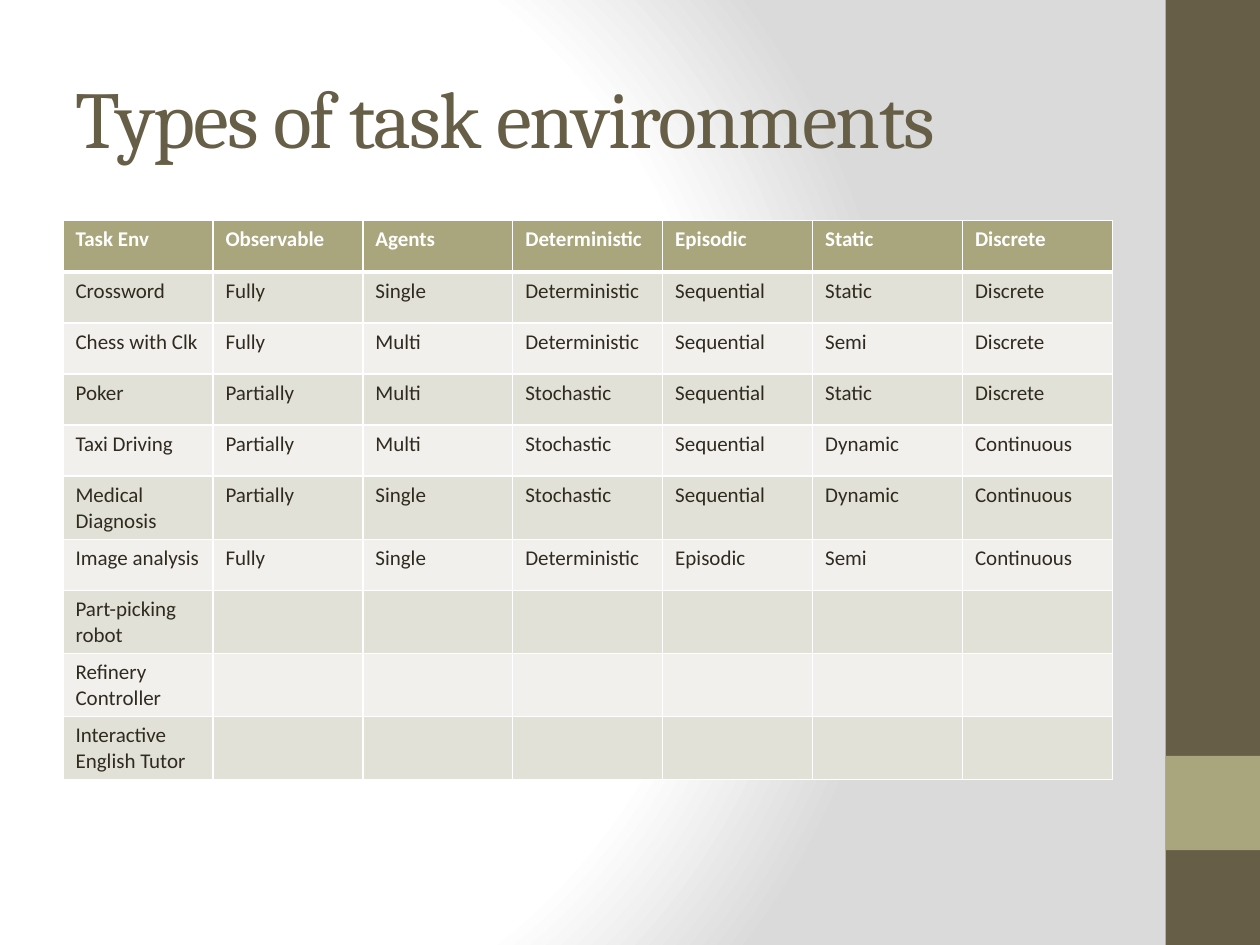
from dataclasses import dataclass

from pptx import Presentation
from pptx.dml.color import RGBColor
from pptx.enum.shapes import MSO_SHAPE
from pptx.enum.text import MSO_ANCHOR
from pptx.oxml import parse_xml
from pptx.oxml.ns import nsdecls, qn
from pptx.util import Cm, Pt


@dataclass(frozen=True)
class Theme:
    brown: str = "675E47"
    olive: str = "A9A57C"
    ink: str = "2F2B20"
    white: str = "FFFFFF"
    grey: str = "DADADA"
    bands: tuple = ("E2E1D7", "F1F0EC")
    title_font: str = "Cambria"
    body_font: str = "Calibri"
    title_size: int = 46
    body_size: int = 12
    rule: int = 1
    header_rule: int = 3


THEME = Theme()

HEADER = ["Task Env", "Observable", "Agents", "Deterministic",
          "Episodic", "Static", "Discrete"]
ENVIRONMENTS = [
    ["Crossword", "Fully", "Single", "Deterministic", "Sequential", "Static", "Discrete"],
    ["Chess with Clk", "Fully", "Multi", "Deterministic", "Sequential", "Semi", "Discrete"],
    ["Poker", "Partially", "Multi", "Stochastic", "Sequential", "Static", "Discrete"],
    ["Taxi Driving", "Partially", "Multi", "Stochastic", "Sequential", "Dynamic", "Continuous"],
    ["Medical Diagnosis", "Partially", "Single", "Stochastic", "Sequential", "Dynamic",
     "Continuous"],
    ["Image analysis", "Fully", "Single", "Deterministic", "Episodic", "Semi", "Continuous"],
    ["Part-picking robot"],
    ["Refinery Controller"],
    ["Interactive English Tutor"],
]


def paint(fill, color):
    fill.solid()
    fill.fore_color.rgb = RGBColor.from_string(color)


def write(frame, text, color, **formats):
    """Put one formatted span into a text frame and return it."""
    span = frame.paragraphs[0].add_run()
    span.text = text
    span.font.color.rgb = RGBColor.from_string(color)
    for name, value in formats.items():
        setattr(span.font, name, value)
    return span


def set_background(page):
    """Radial gradient with its focus on the left."""
    page.background.fill.gradient()
    linear = page.element.find(".//" + qn("a:gradFill"))
    stops = "".join(
        f'<a:gs pos="{position * 1000}"><a:srgbClr val="{color}"/></a:gs>'
        for position, color in ((0, THEME.white), (75, THEME.white), (100, THEME.grey)))
    radial = parse_xml(
        f'<a:gradFill {nsdecls("a")} rotWithShape="1"><a:gsLst>{stops}</a:gsLst>'
        '<a:path path="circle"><a:fillToRect l="20000" t="50000" r="100000" b="50000"/>'
        '</a:path></a:gradFill>')
    linear.getparent().replace(linear, radial)


def add_bar(page, top, height, color):
    """Block of the strip along the right edge."""
    bar = page.shapes.add_shape(MSO_SHAPE.RECTANGLE, Cm(23.5), Cm(top), Cm(1.9), Cm(height))
    bar.shadow.inherit = False
    bar.line.fill.background()
    paint(bar.fill, color)


def add_title(page, text):
    box = page.shapes.add_textbox(Cm(1.27), Cm(0.76), Cm(21.16), Cm(3.18))
    box.text_frame.word_wrap = True
    box.text_frame.vertical_anchor = MSO_ANCHOR.MIDDLE
    span = write(box.text_frame, text, THEME.brown,
                 name=THEME.title_font, size=Pt(THEME.title_size))
    span.font._element.set("spc", "-100")


def set_borders(cell, top, bottom):
    properties = cell._tc.get_or_add_tcPr()
    widths = {"lnL": THEME.rule, "lnR": THEME.rule, "lnT": top, "lnB": bottom}
    for index, (side, width) in enumerate(widths.items()):
        properties.insert(index, parse_xml(
            f'<a:{side} {nsdecls("a")} w="{Pt(width)}"><a:solidFill>'
            f'<a:srgbClr val="{THEME.white}"/></a:solidFill></a:{side}>'))


def add_table(page, rows):
    width, row_height = Cm(21.16), Cm(1.03)
    table = page.shapes.add_table(len(rows), len(rows[0]), Cm(1.27), Cm(4.45),
                                  width, row_height * len(rows)).table
    for column in table.columns:
        column.width = width // len(rows[0])

    for row_index, values in enumerate(rows):
        table.rows[row_index].height = row_height
        is_header = row_index == 0
        fill = THEME.olive if is_header else THEME.bands[(row_index - 1) % 2]
        formats = {"name": THEME.body_font, "size": Pt(THEME.body_size), "bold": is_header}
        for column_index in range(len(rows[0])):
            cell = table.cell(row_index, column_index)
            paint(cell.fill, fill)
            set_borders(cell,
                        top=THEME.header_rule if row_index == 1 else THEME.rule,
                        bottom=THEME.header_rule if is_header else THEME.rule)
            if column_index < len(values):
                write(cell.text_frame, values[column_index],
                      THEME.white if is_header else THEME.ink, **formats)


def main():
    deck = Presentation()
    deck.slide_width, deck.slide_height = Cm(25.4), Cm(19.05)
    page = deck.slides.add_slide(deck.slide_layouts[6])

    # Backdrop and side strip
    set_background(page)
    add_bar(page, 0, 19.05, THEME.brown)
    add_bar(page, 15.24, 1.9, THEME.olive)

    # Content
    add_title(page, "Types of task environments")
    add_table(page, [HEADER] + ENVIRONMENTS)

    deck.save("out.pptx")


if __name__ == "__main__":
    main()
